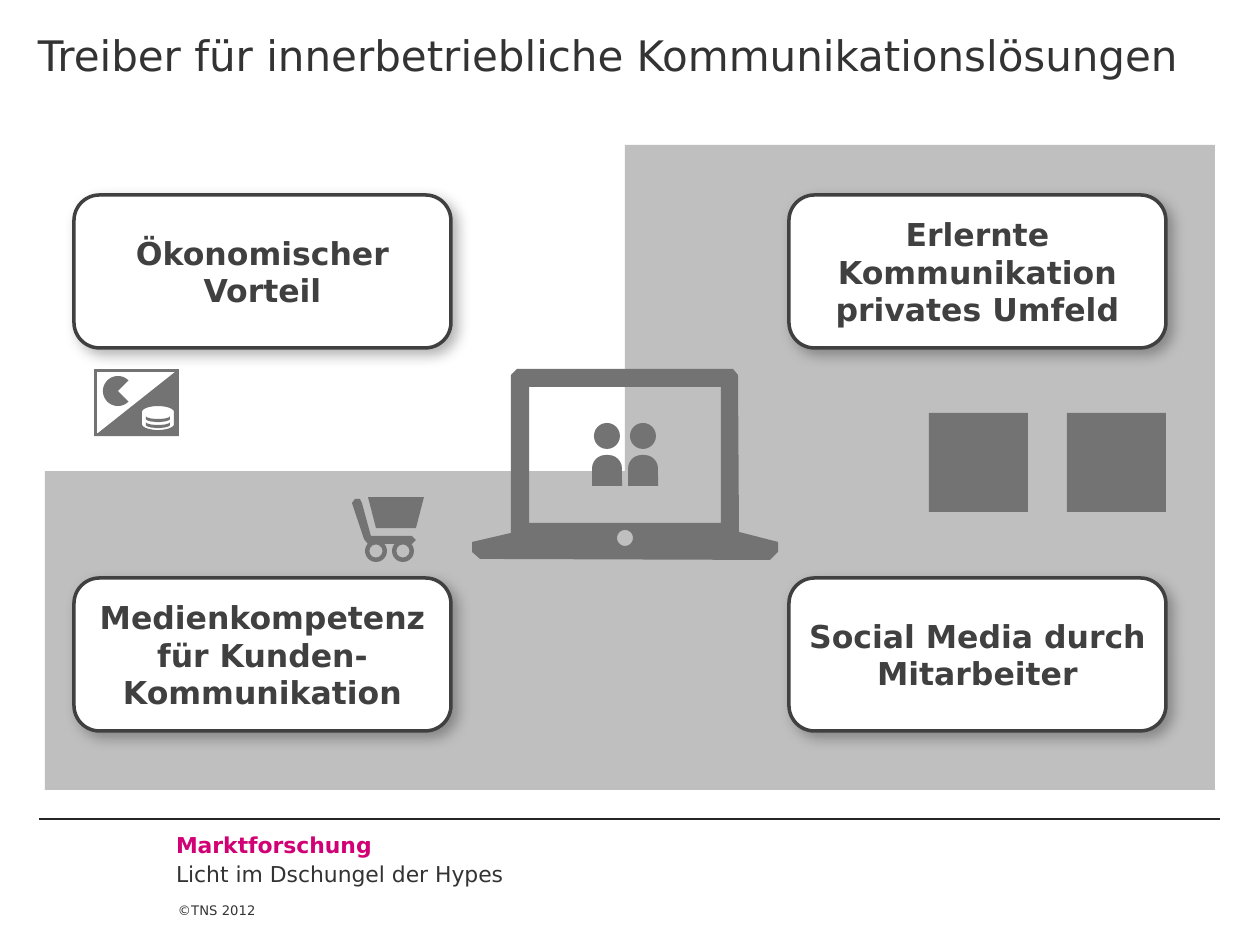
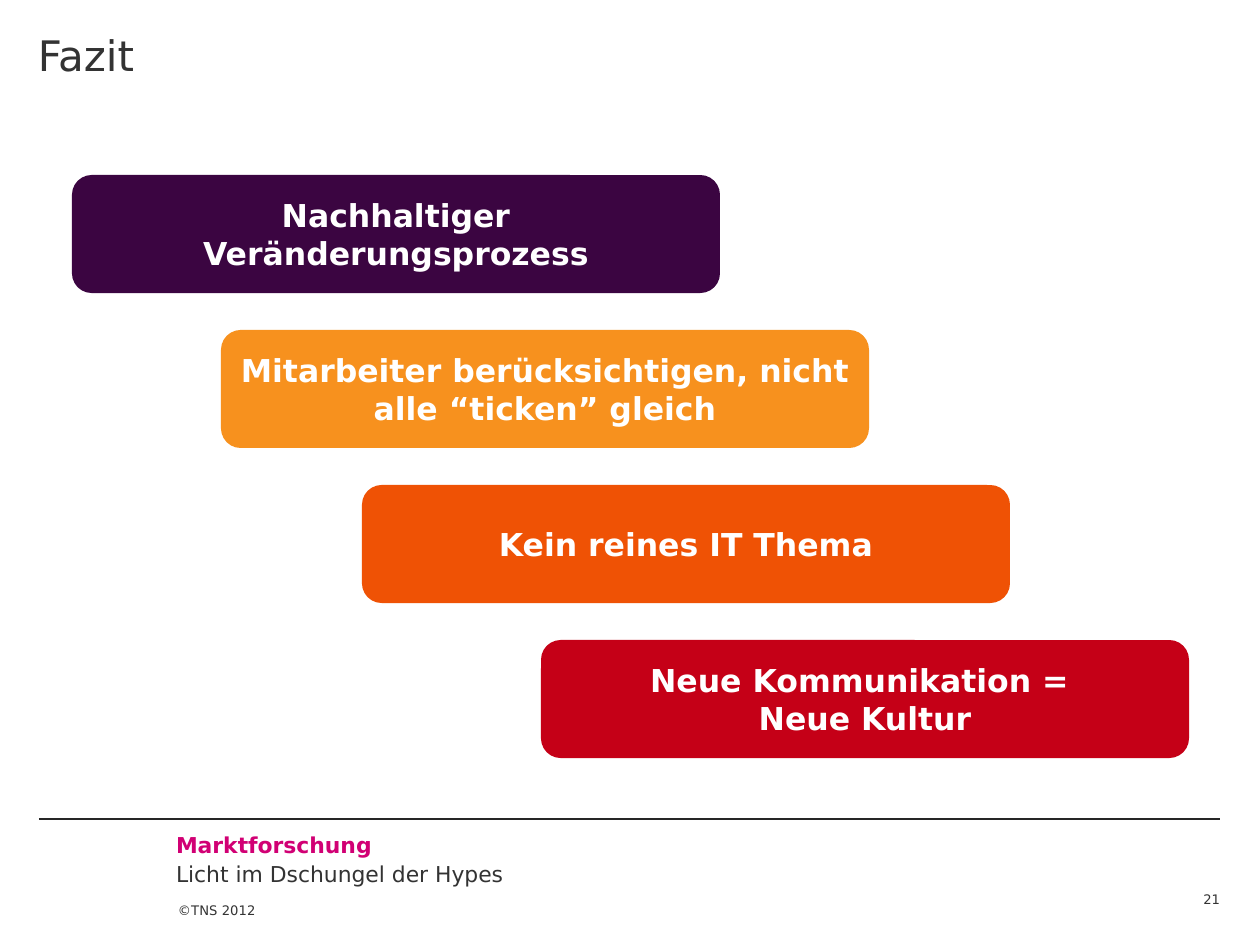
import math

from lxml import etree
from pptx import Presentation
from pptx.dml.color import RGBColor
from pptx.enum.shapes import MSO_CONNECTOR, MSO_SHAPE
from pptx.enum.text import MSO_ANCHOR, PP_ALIGN
from pptx.oxml.ns import qn
from pptx.util import Emu, Pt

SCALE = 914400 / 126
FINE = 10
FONT = "DejaVu Sans"

RECTANGLE = MSO_SHAPE.RECTANGLE
ROUNDED = MSO_SHAPE.ROUNDED_RECTANGLE
OVAL = MSO_SHAPE.OVAL
DONUT = MSO_SHAPE.DONUT
ROUNDED_TOP = MSO_SHAPE.ROUND_2_SAME_RECTANGLE
STRAIGHT = MSO_CONNECTOR.STRAIGHT
LEFT, CENTER, RIGHT = PP_ALIGN.LEFT, PP_ALIGN.CENTER, PP_ALIGN.RIGHT
TOP, MIDDLE, BOTTOM = MSO_ANCHOR.TOP, MSO_ANCHOR.MIDDLE, MSO_ANCHOR.BOTTOM

WHITE = RGBColor(0xFF, 0xFF, 0xFF)
TEXT = RGBColor(0x33, 0x33, 0x33)
RULE = RGBColor(0x26, 0x26, 0x26)
MAGENTA = RGBColor(0xD1, 0x00, 0x74)
PANEL = RGBColor(0xBF, 0xBF, 0xBF)
ICON = RGBColor(0x73, 0x73, 0x73)
DARK = RGBColor(0x40, 0x40, 0x40)
PURPLE = RGBColor(0x3B, 0x05, 0x41)
AMBER = RGBColor(0xF7, 0x91, 0x1E)
ORANGE = RGBColor(0xEF, 0x52, 0x05)
RED = RGBColor(0xC5, 0x00, 0x17)

CARDS = [
    ("Ökonomischer Vorteil", 74, 195),
    ("Erlernte Kommunikation privates Umfeld", 789, 195),
    ("Medienkompetenz für Kunden-Kommunikation", 74, 578),
    ("Social Media durch Mitarbeiter", 789, 578),
]
CONCLUSIONS = [
    ("Nachhaltiger Veränderungsprozess", 72, PURPLE),
    ("Mitarbeiter berücksichtigen, nicht alle “ticken” gleich", 221, AMBER),
    ("Kein reines IT Thema", 362, ORANGE),
    ("Neue Kommunikation = \vNeue Kultur", 541, RED),
]


def px(value):
    return Emu(round(value * SCALE))


def format_text(text_frame, text, size, color, bold=False, align=LEFT):
    text_frame.word_wrap = True
    text_frame.text = text
    for paragraph in text_frame.paragraphs:
        paragraph.alignment = align
        for run in paragraph.runs:
            run.font.name = FONT
            run.font.size = Pt(size)
            run.font.bold = bold
            run.font.color.rgb = color


def add_text(slide, text, box, size, color=TEXT, insets=(0, 0, 0, 0),
             bold=False, align=LEFT, anchor=TOP):
    text_frame = slide.shapes.add_textbox(*map(px, box)).text_frame
    (text_frame.margin_left, text_frame.margin_top,
     text_frame.margin_right, text_frame.margin_bottom) = map(px, insets)
    text_frame.vertical_anchor = anchor
    format_text(text_frame, text, size, color, bold, align)


def paint(shape, fill):
    shape.shadow.inherit = False
    shape.fill.solid()
    shape.fill.fore_color.rgb = fill
    shape.line.fill.background()
    return shape


def add_block(slide, kind, box, fill):
    return paint(slide.shapes.add_shape(kind, *map(px, box)), fill)


def add_label(slide, text, box, fill, color):
    shape = add_block(slide, ROUNDED, box, fill)
    shape.text_frame.vertical_anchor = MIDDLE
    format_text(shape.text_frame, text, 18, color, True, CENTER)
    return shape


def add_outline(slide, contours, fill):
    fine = [[(x * FINE, y * FINE) for x, y in contour] for contour in contours]
    builder = slide.shapes.build_freeform(*fine[0][0], scale=SCALE / FINE)
    builder.add_line_segments(fine[0][1:], close=True)
    for contour in fine[1:]:
        builder.move_to(*contour[0])
        builder.add_line_segments(contour[1:], close=True)
    return paint(builder.convert_to_shape(), fill)


def arc(center_x, center_y, radius_x, radius_y, start=0, end=360, steps=36):
    angles = [math.radians(start + (end - start) * step / steps)
              for step in range(steps + 1)]
    return [(center_x + radius_x * math.cos(angle),
             center_y + radius_y * math.sin(angle)) for angle in angles]


def add_shadow(shape):
    effects = shape._element.spPr.find(qn("a:effectLst"))
    shadow = etree.SubElement(
        effects, qn("a:outerShdw"), blurRad=str(Pt(8)), dist=str(Pt(4)),
        dir=str(45 * 60000), algn="tl", rotWithShape="0")
    color = etree.SubElement(shadow, qn("a:srgbClr"), val="000000")
    etree.SubElement(color, qn("a:alpha"), val="30000")


def add_card(slide, text, left, top):
    card = add_label(slide, text, (left, top, 377, 153), WHITE, DARK)
    card.line.color.rgb = DARK
    card.line.width = Pt(2)
    add_shadow(card)


def add_frame(slide, title):
    add_text(slide, title, (0, 0, 1260, 142), 24, insets=(38, 29, 38, 0))
    rule = slide.shapes.add_connector(STRAIGHT, px(39), px(819), px(1220), px(819))
    rule.line.color.rgb = RULE
    rule.line.width = Pt(0.75)
    etree.SubElement(rule._element.spPr, qn("a:effectLst"))
    footer_insets = (68, 13, 13, 6)
    add_text(slide, "Marktforschung", (108, 819, 1041, 52), 12.5, MAGENTA,
             footer_insets, bold=True)
    add_text(slide, "Licht im Dschungel der Hypes", (108, 848, 1041, 52), 12.5,
             insets=footer_insets)
    add_text(slide, "©TNS 2012", (178, 872, 105, 73), 7.5,
             insets=(0, 0, 0, 37), anchor=BOTTOM)


def add_laptop(slide):
    body = [(472, 542), (511, 533), (511, 375), (517, 369), (733, 369),
            (738, 375), (739, 532), (778, 542), (778, 552), (770, 560),
            (480, 559), (472, 552)]
    screen = [(529, 387), (529, 523), (721, 523), (721, 387)]
    add_outline(slide, [body, screen, arc(625, 538, 8, 8)], ICON)


def add_person(slide, center):
    add_block(slide, OVAL, (center - 13, 423, 26, 26), ICON)
    body = add_block(slide, ROUNDED_TOP, (center - 15, 455, 30, 31), ICON)
    body.adjustments[0] = 0.45


def add_money_icon(slide):
    border = [(94, 369), (179, 369), (179, 436), (94, 436)]
    corner = [(97, 372), (175, 372), (98, 433), (97, 433)]
    coins = arc(158, 424, 16, 6, 0, 180) + arc(158, 412, 16, 6, 180, 360)
    add_outline(slide, [border, corner, coins], ICON)
    for top in (416, 422):
        stripe = arc(158, top, 12, 3, 0, 180) + arc(158, top + 3, 12, 3, 180, 0)
        add_outline(slide, [stripe], ICON)
    add_outline(slide, [arc(118, 391, 15, 15, 45, 315) + [(118, 391)]], ICON)


def add_cart(slide):
    basket = [(368, 497), (424, 497), (416, 528), (376, 528)]
    handle = [(352, 503), (355, 499), (360, 499), (362, 503), (371, 536),
              (412, 536), (416, 540), (412, 544), (368, 544), (364, 539)]
    for contour in (basket, handle):
        add_outline(slide, [contour], ICON)
    for center in (376, 403):
        wheel = add_block(slide, DONUT, (center - 11, 540, 22, 22), ICON)
        wheel.adjustments[0] = 0.2


def build_drivers(slide):
    add_block(slide, RECTANGLE, (45, 471, 1170, 319), PANEL)
    add_block(slide, RECTANGLE, (625, 145, 590, 645), PANEL)
    add_frame(slide, "Treiber für innerbetriebliche Kommunikationslösungen")
    for card in CARDS:
        add_card(slide, *card)
    for left in (929, 1067):
        add_block(slide, RECTANGLE, (left, 413, 99, 99), ICON)
    add_laptop(slide)
    for center in (607, 643):
        add_person(slide, center)
    add_money_icon(slide)
    add_cart(slide)


def build_conclusion(slide):
    add_frame(slide, "Fazit")
    add_text(slide, "21", (1150, 872, 70, 35), 7.5, align=RIGHT, anchor=BOTTOM)
    for row, (text, left, color) in enumerate(CONCLUSIONS):
        add_label(slide, text, (left, 175 + row * 155, 648, 118), color, WHITE)


def main():
    presentation = Presentation()
    presentation.slide_width = px(1260)
    presentation.slide_height = px(945)
    blank = presentation.slide_layouts[6]
    for build in (build_drivers, build_conclusion):
        build(presentation.slides.add_slide(blank))
    presentation.save("out.pptx")


if __name__ == "__main__":
    main()
